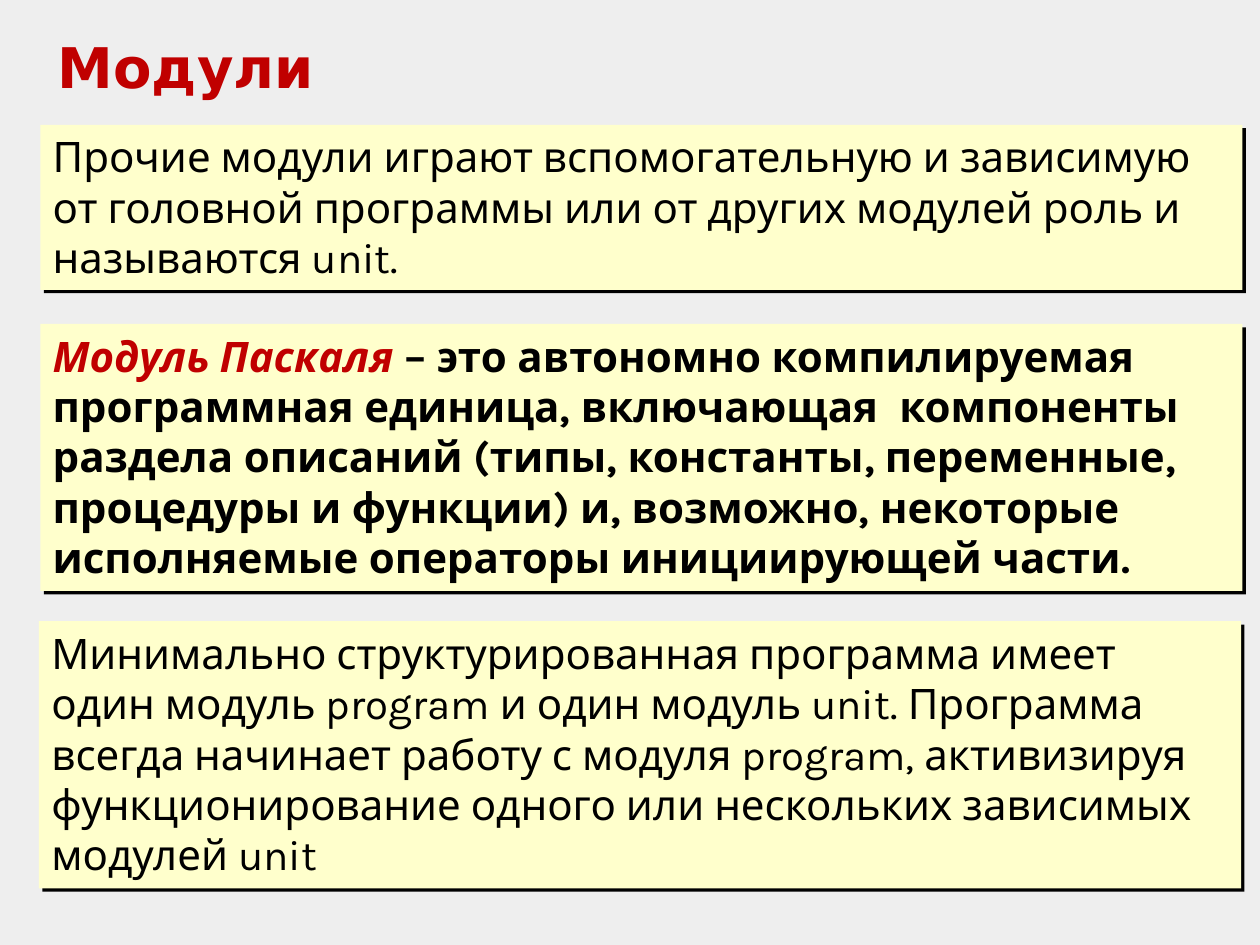
from dataclasses import dataclass

import pptx
import pptx.dml.color
import pptx.enum.shapes
import pptx.enum.text
import pptx.oxml
import pptx.oxml.ns
import pptx.util
from pptx.util import Inches

BACKGROUND = "EEEEEE"
ACCENT = "C00000"
PANEL_FILL = "FFFFCC"
BLACK = "000000"


@dataclass
class Panel:
    left: float
    top: float
    height: float
    text: str
    term: str = ""


PANELS = [
    Panel(0.32, 0.99, 1.31,
          "Прочие модули играют вспомогательную и зависимую от головной "
          "программы или от других модулей роль и называются unit."),
    Panel(0.32, 2.57, 2.12,
          " – это автономно компилируемая программная единица, включающая  "
          "компоненты раздела описаний (типы, константы, переменные, процедуры "
          "и функции) и, возможно, некоторые исполняемые операторы "
          "инициирующей части.",
          term="Модуль Паскаля"),
    Panel(0.31, 4.93, 2.12,
          "Минимально структурированная программа имеет один модуль program "
          "и один модуль unit. Программа всегда начинает работу с модуля "
          "program, активизируя функционирование одного или нескольких "
          "зависимых модулей unit"),
]


def rgb(value: str) -> pptx.dml.color.RGBColor:
    return pptx.dml.color.RGBColor.from_string(value)


def style_font(font, name: str, size: float, color: str, bold: bool) -> None:
    font.name = name
    font.size = pptx.util.Pt(size)
    font.color.rgb = rgb(color)
    font.bold = bold


def add_hard_shadow(shape) -> None:
    """Give the shape an unblurred black shadow to the lower right."""
    shape.shadow.inherit = False
    effects = shape._element.spPr.find(pptx.oxml.ns.qn("a:effectLst"))
    effects.append(pptx.oxml.parse_xml(
        f'<a:outerShdw {pptx.oxml.ns.nsdecls("a")} blurRad="0" '
        f'dist="{pptx.util.Pt(2.8)}" dir="{45 * 60000}" algn="tl" rotWithShape="0">'
        f'<a:srgbClr val="{BLACK}"/></a:outerShdw>'))


def add_title(slide, text: str) -> None:
    title = slide.shapes.add_textbox(
        Inches(0.36), Inches(0.21), Inches(9.28), Inches(0.64))
    title.text_frame.word_wrap = True
    paragraph = title.text_frame.paragraphs[0]
    paragraph.text = text
    style_font(paragraph.font, "DejaVu Sans", 32, ACCENT, bold=True)


def add_panel(slide, panel: Panel) -> None:
    box = slide.shapes.add_shape(
        pptx.enum.shapes.MSO_SHAPE.RECTANGLE, Inches(panel.left),
        Inches(panel.top), Inches(9.54), Inches(panel.height))
    box.fill.solid()
    box.fill.fore_color.rgb = rgb(PANEL_FILL)
    box.line.fill.background()
    add_hard_shadow(box)

    frame = box.text_frame
    frame.word_wrap = True
    frame.vertical_anchor = pptx.enum.text.MSO_ANCHOR.TOP
    paragraph = frame.paragraphs[0]
    paragraph.alignment = pptx.enum.text.PP_ALIGN.LEFT
    style_font(paragraph.font, "Karla", 24, BLACK, bold=bool(panel.term))
    if panel.term:
        term = paragraph.add_run()
        term.text = panel.term
        term.font.italic = True
        term.font.color.rgb = rgb(ACCENT)
    paragraph.add_run().text = panel.text


def main() -> None:
    presentation = pptx.Presentation()
    presentation.slide_width = Inches(10)
    presentation.slide_height = Inches(7.5)
    slide = presentation.slides.add_slide(presentation.slide_layouts[6])
    slide.background.fill.solid()
    slide.background.fill.fore_color.rgb = rgb(BACKGROUND)

    add_title(slide, "Модули")
    for panel in PANELS:
        add_panel(slide, panel)
    presentation.save("out.pptx")


if __name__ == "__main__":
    main()
